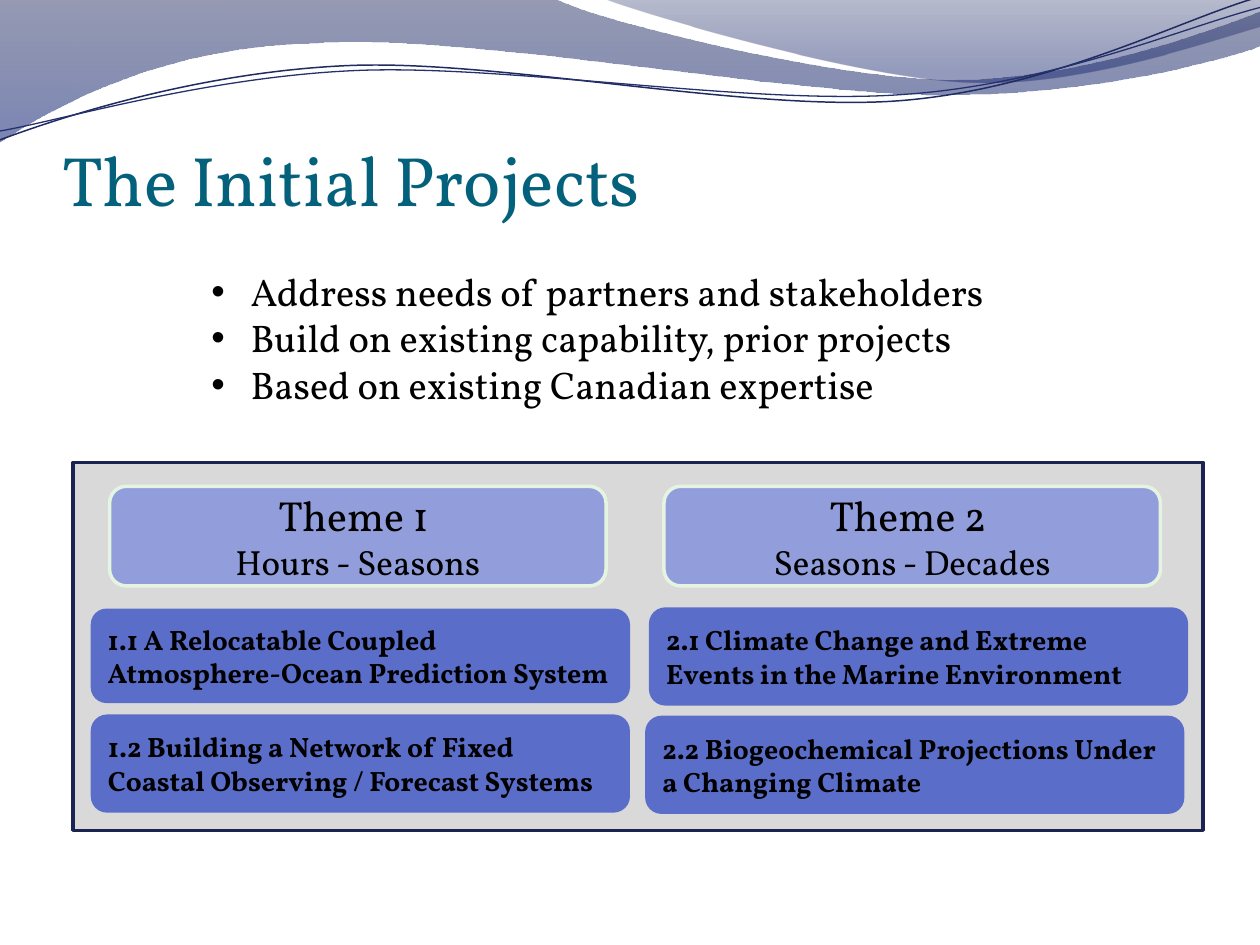
import math
from dataclasses import dataclass

import lxml.etree
import pptx
import pptx.dml.color
import pptx.enum.shapes
import pptx.enum.text
import pptx.oxml.ns
import pptx.util

Inches = pptx.util.Inches
Pt = pptx.util.Pt
RGBColor = pptx.dml.color.RGBColor
Align = pptx.enum.text.PP_ALIGN
Anchor = pptx.enum.text.MSO_ANCHOR
AutoSize = pptx.enum.text.MSO_AUTO_SIZE
Preset = pptx.enum.shapes.MSO_SHAPE
qn = pptx.oxml.ns.qn

BLACK = RGBColor(0x00, 0x00, 0x00)
TEAL = RGBColor(0x04, 0x61, 0x7B)
PANEL_GRAY = RGBColor(0xD9, 0xD9, 0xD9)
PANEL_EDGE = RGBColor(0x1B, 0x24, 0x51)
PROJECT_BLUE = RGBColor(0x5A, 0x6E, 0xC9)
THEME_BLUE = RGBColor(0x91, 0x9E, 0xDB)
THEME_EDGE = RGBColor(0xE5, 0xF4, 0xE0)
FONT_NAME = "Vollkorn"
LINE_TILT = -2.7

Point = tuple[float, float]


@dataclass(frozen=True)
class Stop:
    position: float
    color: RGBColor
    opacity: int


@dataclass(frozen=True)
class Wave:
    start: Point
    curves: list[tuple[Point, ...]]
    stops: tuple[Stop, ...] = ()
    line_color: RGBColor | None = None
    line_width: float = 0
    pivot: Point = (0, 0)
    tilt: float = 0


@dataclass(frozen=True)
class Box:
    left: float
    top: float
    width: float
    height: float
    fill: RGBColor
    edge: RGBColor | None = None
    preset: int = Preset.ROUNDED_RECTANGLE


@dataclass(frozen=True)
class Line:
    text: str
    size: float
    color: RGBColor = BLACK
    bold: bool = False
    align: int = Align.LEFT


WAVES = [
    Wave((0, 0), [
        ((4.4, -0.01),),
        ((4.76, 0.17), (6.64, 0.63), (7.58, 0.63)),
        ((8.53, 0.63), (9.58, 0.26), (10, 0.09)),
        ((10.01, 0.36),),
        ((9.83, 0.44), (8.7, 0.76), (7.46, 0.75)),
        ((6.22, 0.75), (3.82, 0.28), (2.57, 0.34)),
        ((1.29, 0.36), (0.46, 0.83), (-0.01, 1.13)),
        ((0, 0),),
    ], stops=(Stop(0, RGBColor(0x15, 0x21, 0x56), 45),
              Stop(1, RGBColor(0x0E, 0x21, 0x75), 55))),
    Wave((4.79, -0.01), [
        ((5.09, 0.11), (6.82, 0.62), (7.69, 0.65)),
        ((8.56, 0.69), (9.61, 0.32), (10, 0.21)),
        ((10, 0),),
        ((4.79, -0.01),),
    ], stops=(Stop(0, RGBColor(0x13, 0x1F, 0x59), 30),
              Stop(0.8, RGBColor(0x13, 0x23, 0x6D), 45))),
    Wave((0, 1.11), [
        ((0.48, 0.93), (1.58, 0.57), (2.77, 0.52)),
        ((3.95, 0.47), (5.93, 0.89), (7.13, 0.8)),
        ((8.33, 0.71), (9.38, 0.15), (9.98, -0.02)),
    ], line_color=RGBColor(0x20, 0x2B, 0x60), line_width=0.85,
        pivot=(4.99, 0.58), tilt=LINE_TILT),
    Wave((0, 1.04), [
        ((0.47, 0.96), (1.64, 0.61), (2.83, 0.56)),
        ((4.03, 0.51), (5.97, 0.84), (7.17, 0.75)),
        ((8.36, 0.67), (9.41, 0.21), (10, 0.06)),
    ], line_color=RGBColor(0x24, 0x31, 0x6D), line_width=0.75,
        pivot=(5, 0.59), tilt=LINE_TILT),
]

PROJECTS = [
    (0.72, 5.67, 0.78, "1.2 Building a Network of Fixed Coastal Observing / Forecast Systems"),
    (0.72, 4.83, 0.75, "1.1 A Relocatable Coupled Atmosphere-Ocean Prediction System"),
    (5.15, 4.82, 0.78, "2.1 Climate Change and Extreme Events in the Marine Environment"),
    (5.12, 5.68, 0.78, "2.2 Biogeochemical Projections Under a Changing Climate"),
]
THEMES = [
    (0.87, "Theme 1 ", "Hours - Seasons"),
    (5.27, "Theme 2 ", "Seasons - Decades"),
]
GOALS = [
    "Address needs of partners and stakeholders",
    "Build on existing capability, prior projects",
    "Based on existing Canadian expertise",
]


def level_point(point: Point, wave: Wave) -> Point:
    angle = math.radians(-wave.tilt)
    dx, dy = point[0] - wave.pivot[0], point[1] - wave.pivot[1]
    x = wave.pivot[0] + dx * math.cos(angle) - dy * math.sin(angle)
    y = wave.pivot[1] + dx * math.sin(angle) + dy * math.cos(angle)
    return Inches(x), Inches(y)


def bend_segments(ribbon, wave: Wave) -> None:
    segments = iter(list(ribbon.element.iter(qn("a:lnTo"))))
    for curve in wave.curves:
        group = [next(segments) for _ in curve]
        if len(group) == 3:
            bend = lxml.etree.Element(qn("a:cubicBezTo"))
            group[0].addprevious(bend)
            for segment in group:
                bend.append(segment[0])
                segment.getparent().remove(segment)


def draw_wave(slide, wave: Wave) -> None:
    controls = [point for curve in wave.curves for point in curve]
    start, *outline = [level_point(point, wave) for point in (wave.start, *controls)]
    builder = slide.shapes.build_freeform(*start, scale=1.0)
    builder.add_line_segments(outline, close=bool(wave.stops))
    ribbon = builder.convert_to_shape()
    bend_segments(ribbon, wave)
    ribbon.rotation = wave.tilt
    ribbon.shadow.inherit = False
    if not wave.stops:
        ribbon.fill.background()
        ribbon.line.color.rgb = wave.line_color
        ribbon.line.width = Pt(wave.line_width)
        return
    ribbon.line.fill.background()
    ribbon.fill.gradient()
    ribbon.fill.gradient_angle = 270
    for gradient_stop, stop in zip(ribbon.fill.gradient_stops, wave.stops):
        gradient_stop.position = stop.position
        gradient_stop.color.rgb = stop.color
    for color, stop in zip(ribbon.element.iter(qn("a:srgbClr")), wave.stops):
        lxml.etree.SubElement(color, qn("a:alpha"), val=str(stop.opacity * 1000))


def write_lines(frame, lines: list[Line], **frame_format) -> None:
    for name, value in {"word_wrap": True, **frame_format}.items():
        setattr(frame, name, value)
    for index, line in enumerate(lines):
        paragraph = frame.add_paragraph() if index else frame.paragraphs[0]
        paragraph.alignment = line.align
        run = paragraph.add_run()
        run.text = line.text
        font_format = {"name": FONT_NAME, "size": Pt(line.size), "bold": line.bold}
        for name, value in font_format.items():
            setattr(run.font, name, value)
        run.font.color.rgb = line.color


def draw_box(slide, box: Box, lines: list[Line]) -> None:
    extent = map(Inches, (box.left, box.top, box.width, box.height))
    card = slide.shapes.add_shape(box.preset, *extent)
    card.shadow.inherit = False
    card.fill.solid()
    card.fill.fore_color.rgb = box.fill
    if box.edge is None:
        card.line.fill.background()
    else:
        card.line.color.rgb = box.edge
        card.line.width = Pt(2)
    write_lines(card.text_frame, lines, vertical_anchor=Anchor.MIDDLE)


def add_bullet(paragraph) -> None:
    properties = paragraph._p.get_or_add_pPr()
    indent = Inches(0.31)
    properties.set("marL", str(indent))
    properties.set("indent", str(-indent))
    lxml.etree.SubElement(properties, qn("a:buFont"), typeface="Arial")
    lxml.etree.SubElement(properties, qn("a:buChar"), char="•")


def main() -> None:
    deck = pptx.Presentation()
    deck.slide_width, deck.slide_height = Inches(10), Inches(7.5)
    slide = deck.slides.add_slide(deck.slide_layouts[6])
    for wave in WAVES:
        draw_wave(slide, wave)
    draw_box(slide, Box(0.58, 3.67, 8.97, 2.92, PANEL_GRAY, PANEL_EDGE, Preset.RECTANGLE), [])

    title = slide.shapes.add_textbox(*map(Inches, (0.5, 0.5, 9, 1.25)))
    write_lines(title.text_frame, [Line("The Initial Projects", 40, TEAL)],
                vertical_anchor=Anchor.BOTTOM, margin_left=0, margin_right=0, margin_bottom=0)
    for left, top, height, project in PROJECTS:
        draw_box(slide, Box(left, top, 4.28, height, PROJECT_BLUE), [Line(project, 16, bold=True)])
    for left, theme, span in THEMES:
        draw_box(slide, Box(left, 3.86, 3.94, 0.79, THEME_BLUE, THEME_EDGE),
                 [Line(theme, 24, align=Align.CENTER), Line(span, 20, align=Align.CENTER)])
    goals = slide.shapes.add_textbox(*map(Inches, (1.58, 2.08, 7.25, 1.51)))
    write_lines(goals.text_frame, [Line(goal, 22) for goal in GOALS],
                auto_size=AutoSize.SHAPE_TO_FIT_TEXT)
    for paragraph in goals.text_frame.paragraphs:
        add_bullet(paragraph)
    deck.save("out.pptx")


if __name__ == "__main__":
    main()
